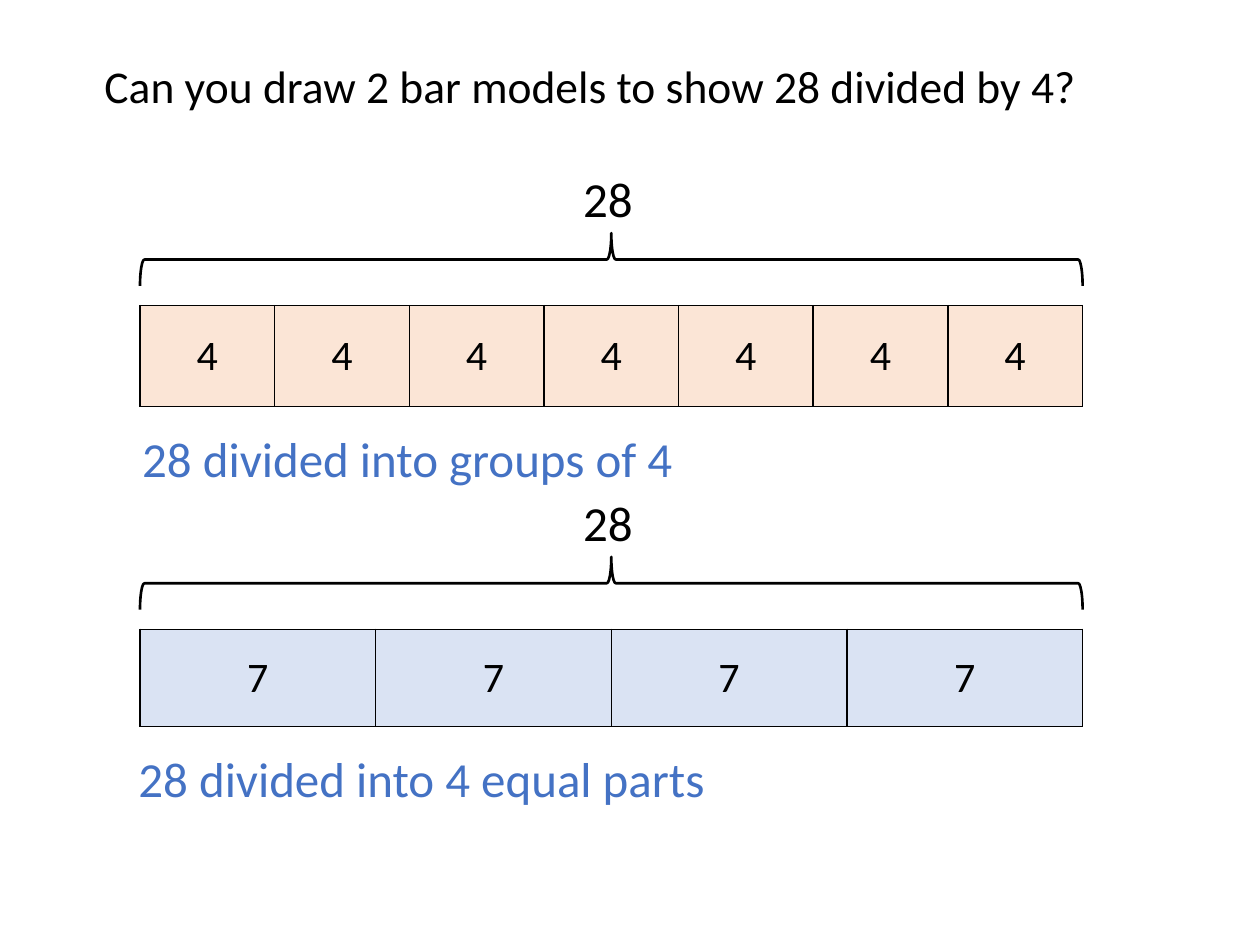
from lxml import etree
from pptx import Presentation
from pptx.dml.color import RGBColor
from pptx.enum import shapes, text
from pptx.oxml.ns import qn
from pptx.util import Pt

BLACK = RGBColor(0x00, 0x00, 0x00)
BLUE = RGBColor(0x44, 0x72, 0xC4)
PEACH = RGBColor(0xFB, 0xE5, 0xD6)
PALE_BLUE = RGBColor(0xDA, 0xE3, 0xF3)
FONT = "Calibri"
BRACE_DEPTH = 30.2


def style(paragraph, size, color):
    """Set the font of a whole paragraph."""
    font = paragraph.font
    font.name, font.size, font.color.rgb = FONT, Pt(size), color


def add_label(slide, words, left, top, width, height, size, color=BLACK, wrap=False):
    """Place one line of text in the given box."""
    frame = slide.shapes.add_textbox(Pt(left), Pt(top), Pt(width), Pt(height)).text_frame
    frame.word_wrap = wrap
    frame.auto_size = text.MSO_AUTO_SIZE.SHAPE_TO_FIT_TEXT
    frame.text = words
    style(frame.paragraphs[0], size, color)


def add_cell_borders(cell):
    """Draw a thin black line on all four sides of a cell."""
    properties = cell._tc.get_or_add_tcPr()
    for index, side in enumerate(("a:lnL", "a:lnR", "a:lnT", "a:lnB")):
        line = etree.Element(qn(side), w=str(Pt(1)))
        solid = etree.SubElement(line, qn("a:solidFill"))
        etree.SubElement(solid, qn("a:srgbClr"), val=str(BLACK))
        properties.insert(index, line)


def add_bar(slide, part, count, fill, left, top, width, height):
    """Place a bar split into equal parts."""
    bar = slide.shapes.add_table(1, count, Pt(left), Pt(top), Pt(width), Pt(height)).table
    bar.first_row = bar.horz_banding = False
    for column in bar.columns:
        column.width = Pt(width / count)
    for cell in bar.iter_cells():
        cell.fill.solid()
        cell.fill.fore_color.rgb = fill
        cell.vertical_anchor = text.MSO_ANCHOR.MIDDLE
        cell.text = part
        paragraph = cell.text_frame.paragraphs[0]
        paragraph.alignment = text.PP_ALIGN.CENTER
        style(paragraph, 24, BLACK)
        add_cell_borders(cell)


def add_brace(slide, left, top, width):
    """Place a brace that spans the width and points up."""
    brace = slide.shapes.add_shape(
        shapes.MSO_SHAPE.LEFT_BRACE,
        Pt(left + (width - BRACE_DEPTH) / 2), Pt(top + (BRACE_DEPTH - width) / 2),
        Pt(BRACE_DEPTH), Pt(width))
    brace.rotation = 90
    brace.shadow.inherit = False
    brace.fill.background()
    brace.line.color.rgb = BLACK
    brace.line.width = Pt(1.5)


def add_bar_model(slide, part, count, fill, caption, caption_left, caption_width,
                  left, top, width, bar_height):
    """Place a total, its brace, the divided bar and a caption."""
    bar_top = top + 81.9
    add_bar(slide, part, count, fill, left, bar_top, width, bar_height)
    add_brace(slide, left, top + 40.4, width)
    add_label(slide, "28", left + 246.2, top, 69, 41, 28, wrap=True)
    add_label(slide, caption, caption_left, bar_top + bar_height + 9,
              caption_width, 41, 28, BLUE)


def main():
    """Build the slide and save it."""
    deck = Presentation()
    deck.slide_width, deck.slide_height = Pt(720), Pt(540)
    slide = deck.slides.add_slide(deck.slide_layouts[6])
    add_label(slide, "Can you draw 2 bar models to show 28 divided by 4?",
              52.6, 29.5, 574.6, 38.9, 26)
    add_bar_model(slide, "4", 7, PEACH, "28 divided into groups of 4", 74.2, 321,
                  80, 92.8, 538.6, 57.6)
    add_bar_model(slide, "7", 4, PALE_BLUE, "28 divided into 4 equal parts", 72, 342,
                  80, 277.8, 538.6, 55.4)
    deck.save("out.pptx")


if __name__ == "__main__":
    main()
